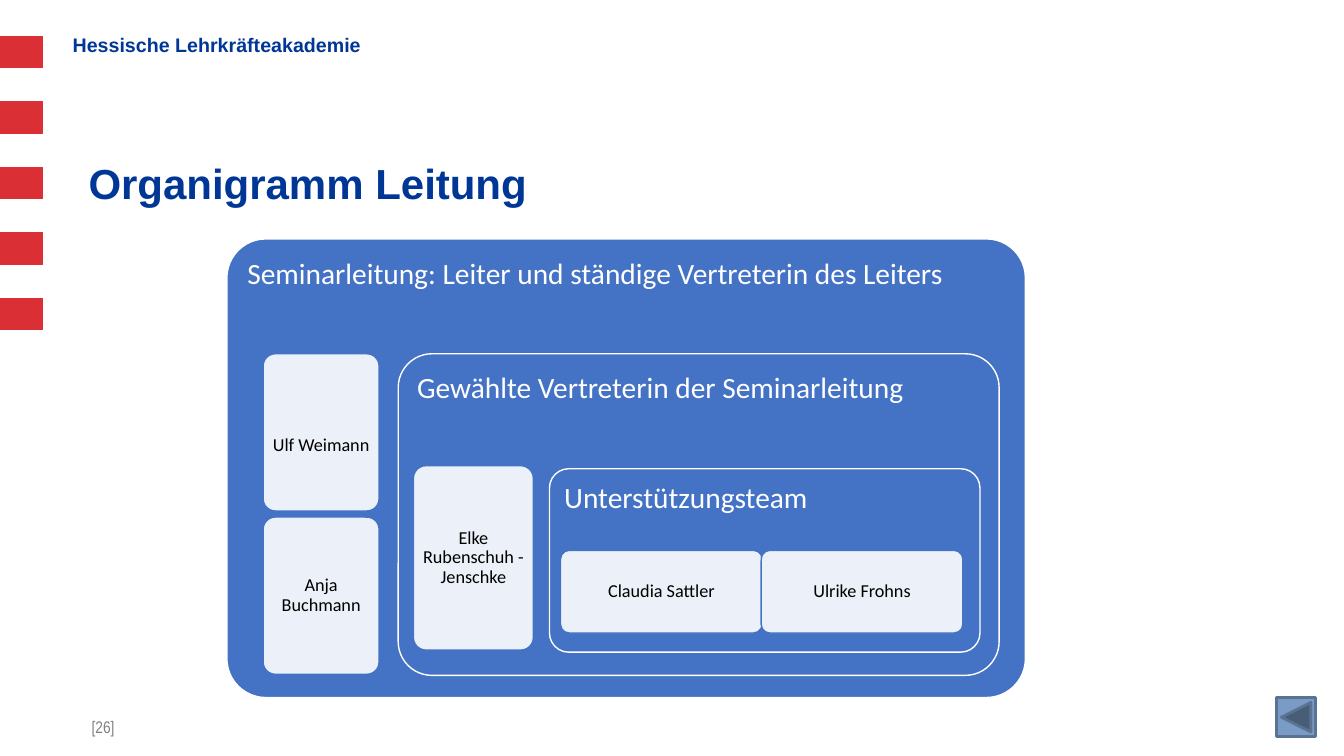
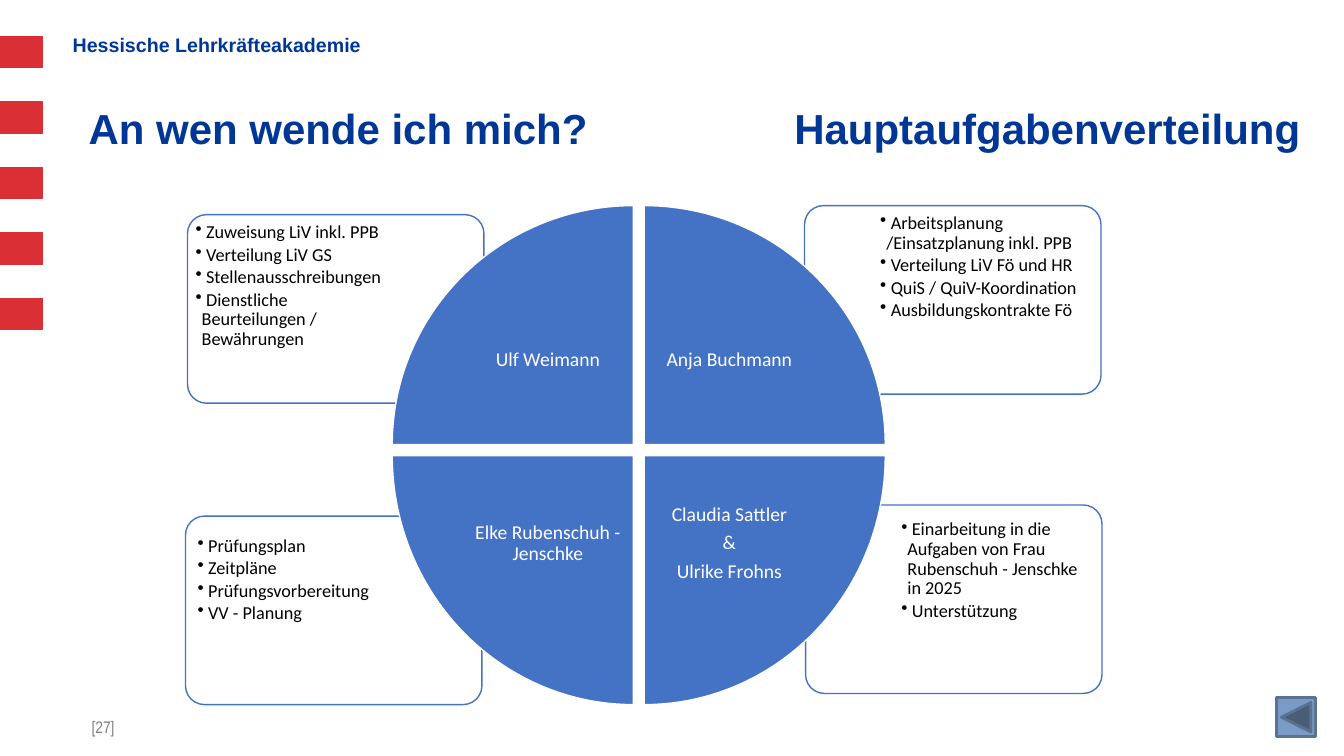
from lxml import etree
from pptx import Presentation
from pptx.dml.color import RGBColor
from pptx.enum.shapes import MSO_SHAPE
from pptx.enum.text import MSO_ANCHOR, PP_ALIGN
from pptx.oxml.ns import qn
from pptx.util import Inches, Pt

RECTANGLE = MSO_SHAPE.RECTANGLE
ROUNDED = MSO_SHAPE.ROUNDED_RECTANGLE
WEDGE = MSO_SHAPE.PIE_WEDGE
BACK_BUTTON = MSO_SHAPE.ACTION_BUTTON_BACK_OR_PREVIOUS
TOP, MIDDLE, BOTTOM = MSO_ANCHOR.TOP, MSO_ANCHOR.MIDDLE, MSO_ANCHOR.BOTTOM
LEFT, CENTER = PP_ALIGN.LEFT, PP_ALIGN.CENTER

COLORS = {
    "band": "DB2F36",
    "navy": "003695",
    "blue": "4472C4",
    "white": "FFFFFF",
    "black": "000000",
    "gray": "808080",
    "button": "799BC5",
    "button_line": "5A7392",
}
FONTS = {
    "header": {"name": "Arial", "size": Pt(14), "bold": True},
    "title": {"name": "Arial", "size": Pt(30), "bold": True},
    "number": {"name": "Arial Narrow", "size": Pt(12)},
    "panel": {"name": "Calibri", "size": Pt(21)},
    "card": {"name": "Calibri", "size": Pt(13)},
    "wedge": {"name": "Calibri", "size": Pt(14)},
}
FONT_COLORS = {
    "header": "navy",
    "title": "navy",
    "number": "gray",
    "panel": "white",
    "card": "black",
    "wedge": "white",
}
PARAGRAPHS = {
    "header": {"line_spacing": 0.9},
    "title": {},
    "number": {},
    "panel": {"line_spacing": 0.9},
    "card": {"line_spacing": 0.9, "space_after": Pt(2)},
    "wedge": {"line_spacing": 0.9, "space_after": Pt(5)},
}


def set_values(target, values):
    for name, value in values.items():
        setattr(target, name, value)


class Deck:
    def __init__(self):
        self.presentation = Presentation()
        self.presentation.slide_width = Inches(13.33)
        self.presentation.slide_height = Inches(7.5)
        self.slide = None

    def add_slide(self, title, number, title_height, tab=None):
        layout = self.presentation.slide_layouts[6]
        self.slide = self.presentation.slides.add_slide(layout)
        for index in range(5):
            self.shape(RECTANGLE, (0, 0.36 + 0.65 * index, 0.42, 0.31), "band", "band", 0.75)
        self.text_box((0.72, 0.3, 10.71, 0.31), ["Hessische Lehrkräfteakademie"], "header",
                      margins=(0, 0.05, 0, 0.05))
        shape = self.text_box((0.78, 0.98, 12.3, title_height), [title], "title",
                              anchor=BOTTOM, margins=(0.1, 0, 0.1, 0))
        if tab:
            properties = shape.text_frame.paragraphs[0]._p.get_or_add_pPr()
            tabs = etree.SubElement(properties, qn("a:tabLst"))
            etree.SubElement(tabs, qn("a:tab"), pos=str(Inches(tab)), algn="l")
        self.text_box((0.81, 7.06, 1.03, 0.33), [number], "number",
                      margins=(0.1, 0.05, 0.1, 0.05))
        self.shape(BACK_BUTTON, (12.66, 6.92, 0.39, 0.39), "button", "button_line", 2)

    def shape(self, kind, box, fill, line, width=1, radius=None):
        shape = self.slide.shapes.add_shape(kind, *map(Inches, box))
        shape.shadow.inherit = False
        shape.fill.solid()
        shape.fill.fore_color.rgb = RGBColor.from_string(COLORS[fill])
        shape.line.color.rgb = RGBColor.from_string(COLORS[line])
        shape.line.width = Pt(width)
        if radius is not None:
            shape.adjustments[0] = radius
        return shape

    def set_text(self, shape, lines, style, anchor=TOP, align=LEFT, margins=(0.09,) * 4,
                 bullets=False):
        frame = shape.text_frame
        left, top, right, bottom = map(Inches, margins)
        set_values(frame, {"word_wrap": True, "vertical_anchor": anchor,
                           "margin_left": left, "margin_top": top,
                           "margin_right": right, "margin_bottom": bottom})
        for index, line in enumerate(lines):
            paragraph = frame.add_paragraph() if index else frame.paragraphs[0]
            if bullets:
                properties = paragraph._p.get_or_add_pPr()
                properties.set("marL", str(Inches(0.06)))
                properties.set("indent", str(-Inches(0.06)))
                etree.SubElement(properties, qn("a:buChar"), char="•")
            set_values(paragraph, {"alignment": align, **PARAGRAPHS[style]})
            run = paragraph.add_run()
            run.text = f" {line}" if bullets else line
            set_values(run.font, FONTS[style])
            run.font.color.rgb = RGBColor.from_string(COLORS[FONT_COLORS[style]])

    def text_box(self, box, lines, style, **options):
        shape = self.slide.shapes.add_textbox(*map(Inches, box))
        self.set_text(shape, lines, style, **options)
        return shape

    def panel(self, box, text, radius=0.105):
        shape = self.shape(ROUNDED, box, "blue", "white", radius=radius)
        self.set_text(shape, [text], "panel")

    def card(self, box, radius=0.105):
        shape = self.shape(ROUNDED, box, "white", "blue", radius=radius)
        color = shape._element.spPr.find(qn("a:solidFill"))[0]
        etree.SubElement(color, qn("a:alpha"), val="90000")
        return shape

    def person(self, box, name, top_margin=0.05):
        self.set_text(self.card(box), [name], "card", anchor=MIDDLE, align=CENTER,
                      margins=(0.05, top_margin, 0.05, 0.05))

    def task_list(self, corner, text_box, tasks):
        self.card((*corner, 2.94, 1.87), radius=0.1)
        self.text_box(text_box, tasks, "card", margins=(0.04,) * 4, bullets=True)

    def wedge(self, box, rotation, lines):
        left, top, width, height = box
        frame_width, frame_height = (height, width) if rotation % 180 else (width, height)
        shape = self.shape(WEDGE, (left + (width - frame_width) / 2,
                                   top + (height - frame_height) / 2,
                                   frame_width, frame_height), "blue", "white")
        shape.rotation = rotation
        text_width, text_height = width * 0.707, height * 0.707
        text_left = left + width - text_width if rotation in (0, 270) else left
        text_top = top + height - text_height if rotation in (0, 90) else top
        self.text_box((text_left, text_top, text_width, text_height), lines, "wedge",
                      anchor=MIDDLE, align=CENTER)


def add_leadership(deck):
    deck.add_slide("Organigramm Leitung", "[26]", 1.08)
    deck.panel((2.25, 2.37, 7.92, 4.55),
               "Seminarleitung: Leiter und ständige Vertreterin des Leiters", 0.085)
    deck.person((2.61, 3.51, 1.15, 1.56), "Ulf Weimann", top_margin=0.31)
    deck.person((2.61, 5.13, 1.15, 1.56), "Anja Buchmann")
    deck.panel((3.95, 3.51, 5.96, 3.19), "Gewählte Vertreterin der Seminarleitung")
    deck.person((4.1, 4.62, 1.19, 1.83), "Elke Rubenschuh - Jenschke")
    deck.panel((5.45, 4.65, 4.27, 1.82), "Unterstützungsteam")
    for index, name in enumerate(["Claudia Sattler", "Ulrike Frohns"]):
        deck.person((5.56 + 1.99 * index, 5.46, 2, 0.82), name)


def add_responsibilities(deck):
    deck.add_slide("An wen wende ich mich?\tHauptaufgabenverteilung", "[27]", 0.54, tab=7)
    task_lists = [
        ((7.99, 5.01), (8.9, 5.12, 1.97, 1.32),
         ["Einarbeitung in die Aufgaben von Frau Rubenschuh - Jenschke in 2025",
          "Unterstützung"]),
        ((1.84, 5.12), (1.92, 5.28, 1.97, 1.32),
         ["Prüfungsplan", "Zeitpläne", "Prüfungsvorbereitung", "VV - Planung"]),
        ((7.98, 2.04), (8.69, 2.08, 2.19, 1.32),
         ["Arbeitsplanung /Einsatzplanung inkl. PPB", "Verteilung LiV Fö und HR",
          "QuiS / QuiV-Koordination", "Ausbildungskontrakte Fö"]),
        ((1.86, 2.13), (1.9, 2.17, 2.12, 1.32),
         ["Zuweisung LiV inkl. PPB", "Verteilung LiV GS", "Stellenausschreibungen",
          "Dienstliche Beurteilungen / Bewährungen"]),
    ]
    for corner, text_box, tasks in task_lists:
        deck.task_list(corner, text_box, tasks)
    left, right = 3.89, 6.39
    upper, lower = (2.04, 2.37), (4.52, 2.47)
    wedges = [
        (left, upper, ["Ulf Weimann"]),
        (right, upper, ["Anja Buchmann"]),
        (right, lower, ["Claudia Sattler", "&", "Ulrike Frohns"]),
        (left, lower, ["Elke Rubenschuh - Jenschke"]),
    ]
    for index, (column, (top, height), names) in enumerate(wedges):
        deck.wedge((column, top, 2.39, height), 90 * index, names)


def main():
    deck = Deck()
    add_leadership(deck)
    add_responsibilities(deck)
    deck.presentation.save("out.pptx")


if __name__ == "__main__":
    main()
